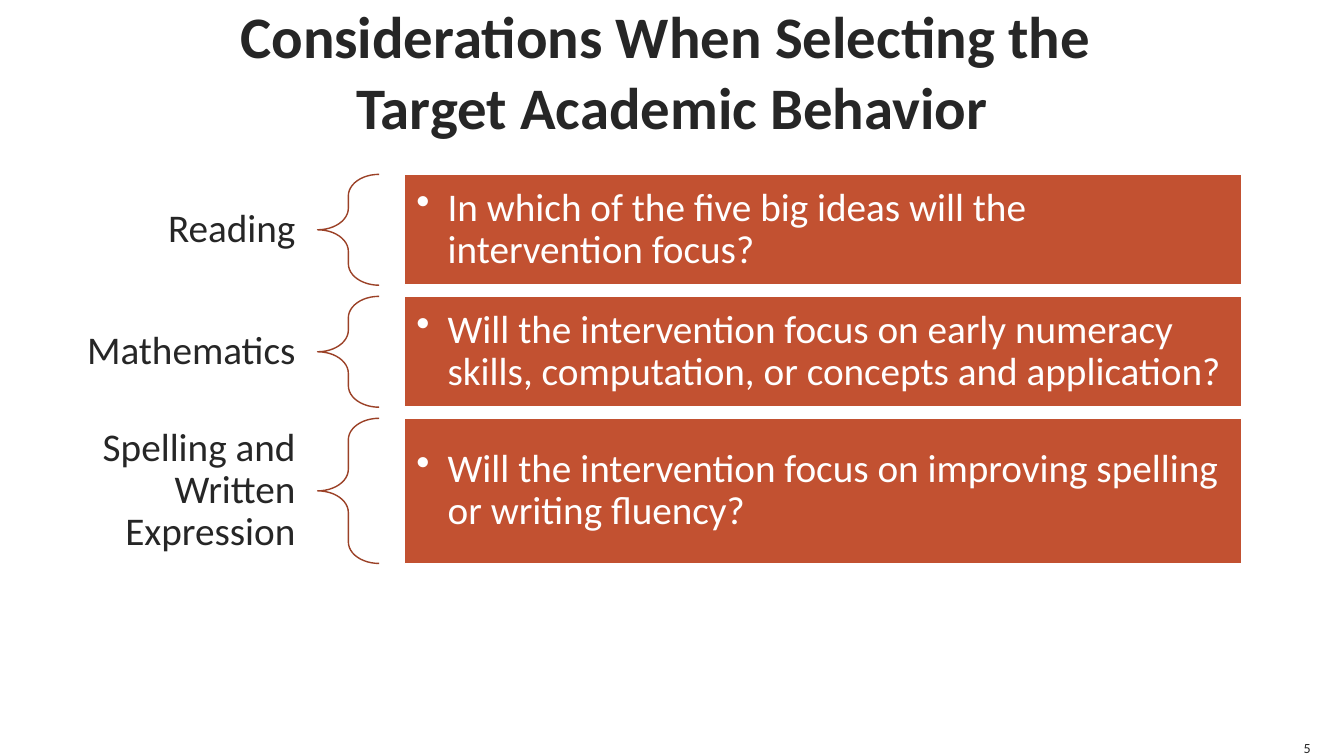
from lxml import etree
from pptx import Presentation
from pptx.dml.color import RGBColor
from pptx.enum.shapes import MSO_SHAPE
from pptx.enum.text import MSO_ANCHOR, PP_ALIGN
from pptx.oxml.ns import qn
from pptx.util import Inches, Pt

RECTANGLE, LEFT_BRACE = MSO_SHAPE.RECTANGLE, MSO_SHAPE.LEFT_BRACE
MIDDLE, BOTTOM = MSO_ANCHOR.MIDDLE, MSO_ANCHOR.BOTTOM
LEFT, CENTER, RIGHT = PP_ALIGN.LEFT, PP_ALIGN.CENTER, PP_ALIGN.RIGHT
FONT = "Calibri"
COLORS = {"ink": "262626", "panel": "C25131", "brace": "9B4127", "white": "FFFFFF"}
SUBJECTS = [
    ("Reading", 1.1, "In which of the five big ideas will the intervention focus?"),
    ("Mathematics", 1.1, "Will the intervention focus on early numeracy skills, "
                         "computation, or concepts and application?"),
    ("Spelling and Written Expression", 1.44,
     "Will the intervention focus on improving spelling or writing fluency?"),
]
ROW_GAP = 0.11
BULLET_INDENT = 0.31


def color(name):
    """Return the named palette colour."""
    return RGBColor.from_string(COLORS[name])


def write(shape, text, size=28, ink="ink", bold=False, align=LEFT, anchor=MIDDLE,
          insets=(0, 0), spacing=None, bullet=False, wrap=True):
    """Fill a shape with one formatted paragraph."""
    frame = shape.text_frame
    frame.word_wrap = wrap
    frame.vertical_anchor = anchor
    frame.margin_left = frame.margin_right = Inches(insets[0])
    frame.margin_top = frame.margin_bottom = Inches(insets[1])
    paragraph = frame.paragraphs[0]
    paragraph.text = text
    paragraph.alignment = align
    if spacing:
        paragraph.line_spacing = spacing
    if bullet:
        properties = paragraph._p.get_or_add_pPr()
        properties.set("marL", str(Inches(BULLET_INDENT)))
        properties.set("indent", str(-Inches(BULLET_INDENT)))
        etree.SubElement(properties, qn("a:buChar")).set("char", "•")
    for run in paragraph.runs:
        run.font.name = FONT
        run.font.size = Pt(size)
        run.font.bold = bold
        run.font.color.rgb = color(ink)


def add_text(slide, box, text, **style):
    """Add a text box with formatted text."""
    write(slide.shapes.add_textbox(*map(Inches, box)), text, **style)


def add_outline(slide, preset, box, line, fill=None):
    """Add a preset shape with a thin line and an optional fill."""
    shape = slide.shapes.add_shape(preset, *map(Inches, box))
    shape.shadow.inherit = False
    shape.line.color.rgb = color(line)
    shape.line.width = Pt(1)
    if fill:
        shape.fill.solid()
        shape.fill.fore_color.rgb = color(fill)
    else:
        shape.fill.background()
    return shape


def add_subject(slide, box, subject, question):
    """Place a subject label, its brace and its question panel in a row."""
    left, top, width, height = box
    add_text(slide, (left, top, 3.05, height), subject,
             align=RIGHT, insets=(0.22, 0.08), spacing=0.9)
    brace = add_outline(slide, LEFT_BRACE, (left + 3.05, top, 0.61, height), "brace")
    brace.adjustments[0] = 0.35
    panel = add_outline(slide, RECTANGLE, (left + 3.91, top, width - 3.91, height),
                        "white", "panel")
    write(panel, question, ink="white", insets=(0.12, 0.12), spacing=0.9, bullet=True)


def add_subjects(slide, box):
    """Stack the subject rows downwards from the top of the box."""
    left, top, width = box
    for subject, height, question in SUBJECTS:
        add_subject(slide, (left, top, width, height), subject, question)
        top += height + ROW_GAP


def main():
    """Build and save the slide."""
    deck = Presentation()
    deck.slide_width, deck.slide_height = Inches(13.33), Inches(7.5)
    slide = deck.slides.add_slide(deck.slide_layouts[6])
    add_text(slide, (0.5, 0, 12.33, 1.4),
             "Considerations When Selecting the \vTarget Academic Behavior",
             size=42, bold=True, align=CENTER)
    add_subjects(slide, (0.1, 1.73, 12.22))
    add_text(slide, (12.83, 7.33, 0.17, 0.17), "5",
             size=10, align=RIGHT, anchor=BOTTOM, wrap=False)
    deck.save("out.pptx")


if __name__ == "__main__":
    main()
